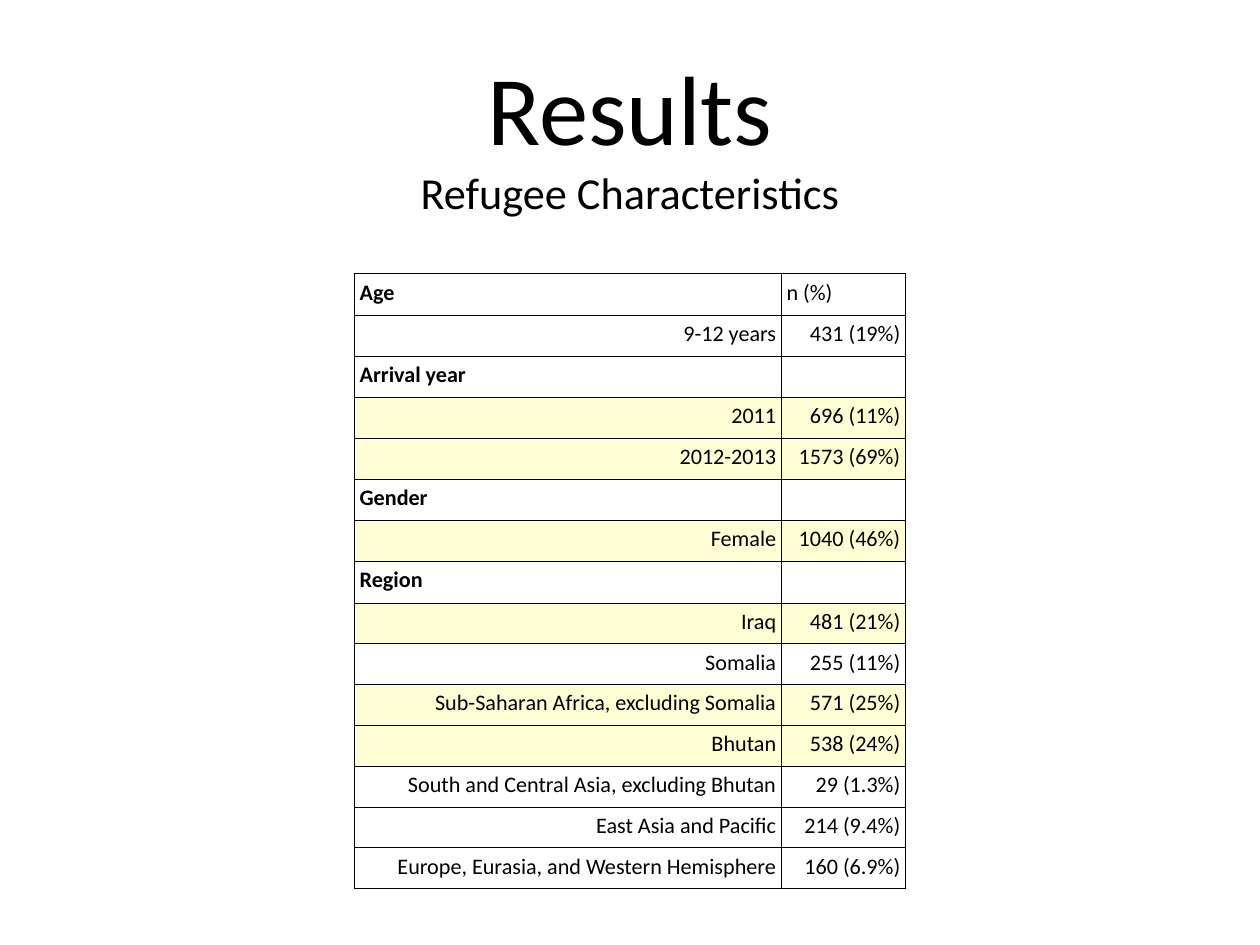
from dataclasses import dataclass

from lxml.etree import SubElement
from pptx import Presentation
from pptx.dml.color import RGBColor
from pptx.enum.text import MSO_ANCHOR as Anchor, MSO_AUTO_SIZE as AutoSize, PP_ALIGN as Align
from pptx.oxml.ns import qn
from pptx.util import Cm, Pt


@dataclass(frozen=True)
class Theme:
    font: str = "Calibri"
    ink: str = "000000"
    highlight: str = "FFFED5"
    title: int = 80
    subtitle: int = 36
    body: int = 18
    border: float = 0.5


THEME = Theme()

CHARACTERISTICS = [
    ("Age", "n (%)", [("9-12 years", "431 (19%)", False)]),
    ("Arrival year", "", [
        ("2011", "696 (11%)", True),
        ("2012-2013", "1573 (69%)", True),
    ]),
    ("Gender", "", [("Female", "1040 (46%)", True)]),
    ("Region", "", [
        ("Iraq", "481 (21%)", True),
        ("Somalia", "255 (11%)", False),
        ("Sub-Saharan Africa, excluding Somalia", "571 (25%)", True),
        ("Bhutan", "538 (24%)", True),
        ("South and Central Asia, excluding Bhutan", "29 (1.3%)", False),
        ("East Asia and Pacific", "214 (9.4%)", False),
        ("Europe, Eurasia, and Western Hemisphere", "160 (6.9%)", False),
    ]),
]


def format_paragraph(p, size, align, bold=False):
    p.alignment = align
    p.font.name = THEME.font
    p.font.size = Pt(size)
    p.font.bold = bold
    p.font.color.rgb = RGBColor.from_string(THEME.ink)


def set_margins(target, margin):
    target.margin_left = target.margin_right = margin
    target.margin_top = target.margin_bottom = margin


def set_title(s, title, subtitle):
    sp = s.shapes.title
    sp.left, sp.top, sp.width, sp.height = Cm(2.64), Cm(0.69), Cm(30.84), Cm(6.25)
    tf = sp.text_frame
    tf.text = f"{title}\n{subtitle}"
    tf.word_wrap = True
    tf.auto_size = AutoSize.NONE
    tf.vertical_anchor = Anchor.MIDDLE
    set_margins(tf, 0)
    for p, size in zip(tf.paragraphs, (THEME.title, THEME.subtitle)):
        format_paragraph(p, size, Align.CENTER)
        p.space_before = Pt(0)


def set_borders(cell):
    tc_pr = cell._tc.get_or_add_tcPr()
    for side in ("a:lnL", "a:lnR", "a:lnT", "a:lnB"):
        ln = SubElement(tc_pr, qn(side), w=str(Pt(THEME.border)))
        fill = SubElement(ln, qn("a:solidFill"))
        SubElement(fill, qn("a:srgbClr"), val=THEME.ink)


def fill_cell(cell, text, align, bold=False, highlight=False):
    cell.text = text
    set_margins(cell, Cm(0.15))
    format_paragraph(cell.text_frame.paragraphs[0], THEME.body, align, bold)
    set_borders(cell)
    if highlight:
        cell.fill.solid()
        cell.fill.fore_color.rgb = RGBColor.from_string(THEME.highlight)
    else:
        cell.fill.background()


def add_characteristics(s, groups):
    count = sum(1 + len(items) for _, _, items in groups)
    frame = s.shapes.add_table(count, 2, Cm(10.16), Cm(7.85), Cm(15.8), Cm(17.63))
    table = frame.table
    table.first_row = table.horz_banding = False
    for column, width in zip(table.columns, (12.24, 3.56)):
        column.width = Cm(width)
    rows = iter(table.rows)
    for heading, unit, items in groups:
        row = next(rows)
        row.height = Cm(1.19)
        fill_cell(row.cells[0], heading, Align.LEFT, bold=True)
        fill_cell(row.cells[1], unit, Align.LEFT)
        for label, value, highlight in items:
            row = next(rows)
            row.height = Cm(1.17)
            for cell, text in zip(row.cells, (label, value)):
                fill_cell(cell, text, Align.RIGHT, highlight=highlight)


def main():
    prs = Presentation()
    prs.slide_width, prs.slide_height = Cm(36.12), Cm(27.1)
    s = prs.slides.add_slide(prs.slide_layouts[5])
    set_title(s, "Results", "Refugee Characteristics")
    add_characteristics(s, CHARACTERISTICS)
    prs.save("out.pptx")


if __name__ == "__main__":
    main()
